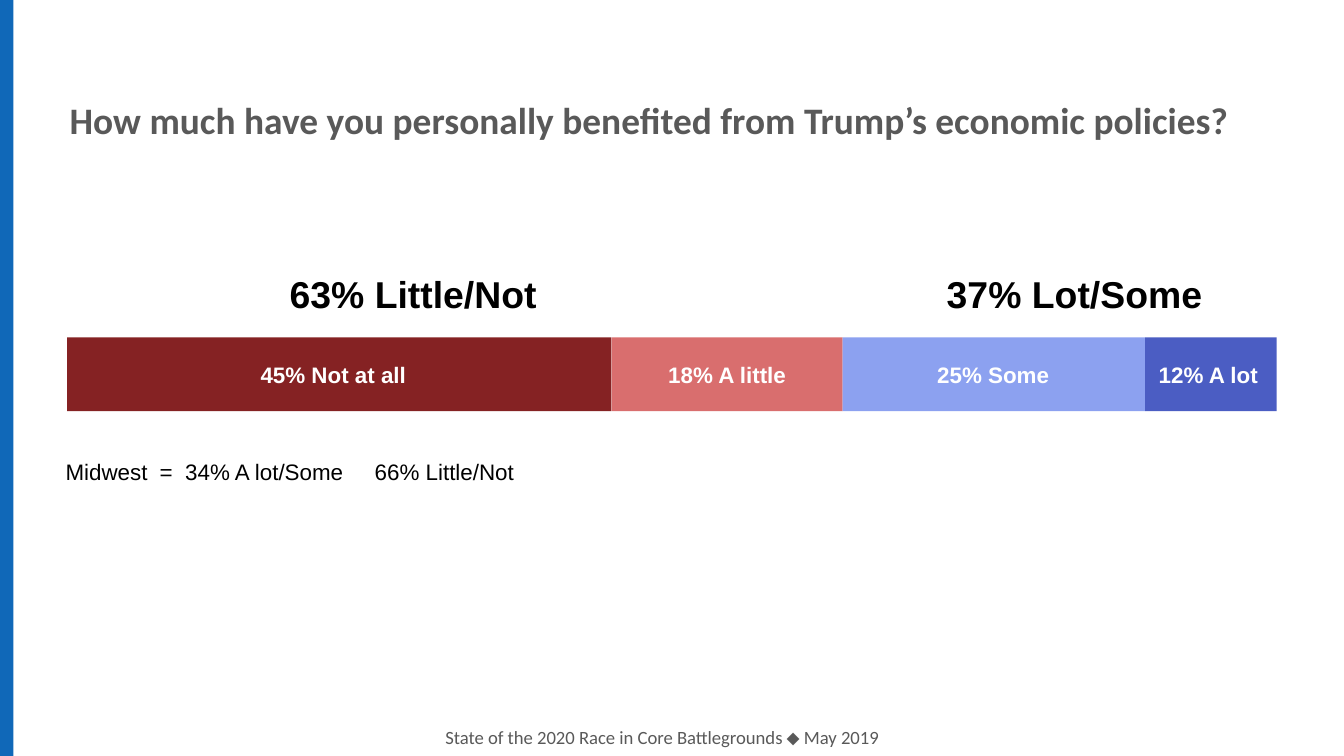
from dataclasses import dataclass
from lxml import etree
from pptx import Presentation
from pptx.dml.color import RGBColor
from pptx.enum.shapes import MSO_SHAPE
from pptx.enum.text import MSO_ANCHOR, PP_ALIGN
from pptx.oxml.ns import qn
from pptx.util import Inches, Pt

RECT = MSO_SHAPE.RECTANGLE
LEFT, MID = PP_ALIGN.LEFT, PP_ALIGN.CENTER
TOP = MSO_ANCHOR.TOP


@dataclass(frozen=True)
class Theme:
    head: str = "Calibri"
    body: str = "Arial"
    gray: str = "595959"
    black: str = "000000"
    white: str = "FFFFFF"
    blue: str = "1068B8"
    big: int = 20
    label: int = 12
    small: int = 10


T = Theme()
WIDE = 10
HIGH = WIDE * 9 / 16

# Content
TITLE = "How much have you personally benefited from Trump’s economic policies?"
FOOTER = "State of the 2020 Race in Core Battlegrounds ⬥ May 2019"
PARTS = [  # label, label left, bar width, fill
    ("45% Not at all", 1.62, 4.05, "852223"),
    ("18% A little", 4.55, 1.72, "D96E6E"),
    ("25% Some", 6.53, 2.25, "8CA1F0"),
    ("12% A lot", 8.13, 0.98, "4B5DC3"),
]
SUMS = [("63% Little/Not", 1.95, 2.25), ("37% Lot/Some", 6.92, 2.15)]
REGION = ["Midwest", "=", "34% A lot/Some", "66% Little/Not"]
STOPS = [0.7, 0.89, 2.3]
BAR_X, BAR_Y, BAR_H = 0.5, 2.51, 0.55
LABEL_W, TEXT_H = 1.72, 0.4

deck = Presentation()
deck.slide_width, deck.slide_height = Inches(WIDE), Inches(HIGH)
slide = deck.slides.add_slide(deck.slide_layouts[6])


def write(x, y, w, h, text, size, color, font=T.body, bold=False,
          align=MID, pad=0.1, stops=()):
    box = slide.shapes.add_textbox(*map(Inches, (x, y, w, h)))
    frame = box.text_frame
    frame.word_wrap = True
    frame.vertical_anchor = TOP
    frame.margin_left = frame.margin_right = Inches(0.1)
    frame.margin_top = frame.margin_bottom = Inches(pad)
    para = frame.paragraphs[0]
    para.alignment = align
    if stops:
        tabs = etree.SubElement(para._p.get_or_add_pPr(), qn("a:tabLst"))
        for stop in stops:
            etree.SubElement(tabs, qn("a:tab"), pos=str(Inches(stop)), algn="l")
    run = para.add_run()
    run.text = text
    run.font.name, run.font.size, run.font.bold = font, Pt(size), bold
    run.font.color.rgb = RGBColor.from_string(color)
    return para


def block(x, y, w, h, fill):
    shape = slide.shapes.add_shape(RECT, *map(Inches, (x, y, w, h)))
    shape.shadow.inherit = False
    shape.fill.solid()
    shape.fill.fore_color.rgb = RGBColor.from_string(fill)
    shape.line.fill.background()


# Footer and side stripe
write(1.65, 5.35, 6.55, 0.27, FOOTER, T.small, T.gray, T.head, pad=0.05)
block(0, 0, WIDE / 100, HIGH, T.blue)

# Stacked bar, each part starting where the last one ends
x = BAR_X
for label, left, width, fill in PARTS:
    block(x, BAR_Y, width, BAR_H, fill)
    write(left, BAR_Y + 0.08, LABEL_W, TEXT_H, label, T.label, T.white, bold=True)
    x += width

# Totals above the bar
for label, left, width in SUMS:
    write(left, 1.92, width, TEXT_H, label, T.big, T.black, bold=True)

# Regional result below the bar
write(0.39, 3.31, 5.83, TEXT_H, "\t".join(REGION), T.label, T.black,
      align=LEFT, stops=STOPS)

# Title
title = write(0.42, 0.74, 9.46, 0.94, TITLE, T.big, T.gray, T.head,
              bold=True, align=LEFT, pad=0.05)
title.line_spacing = 0.8

deck.save("out.pptx")
